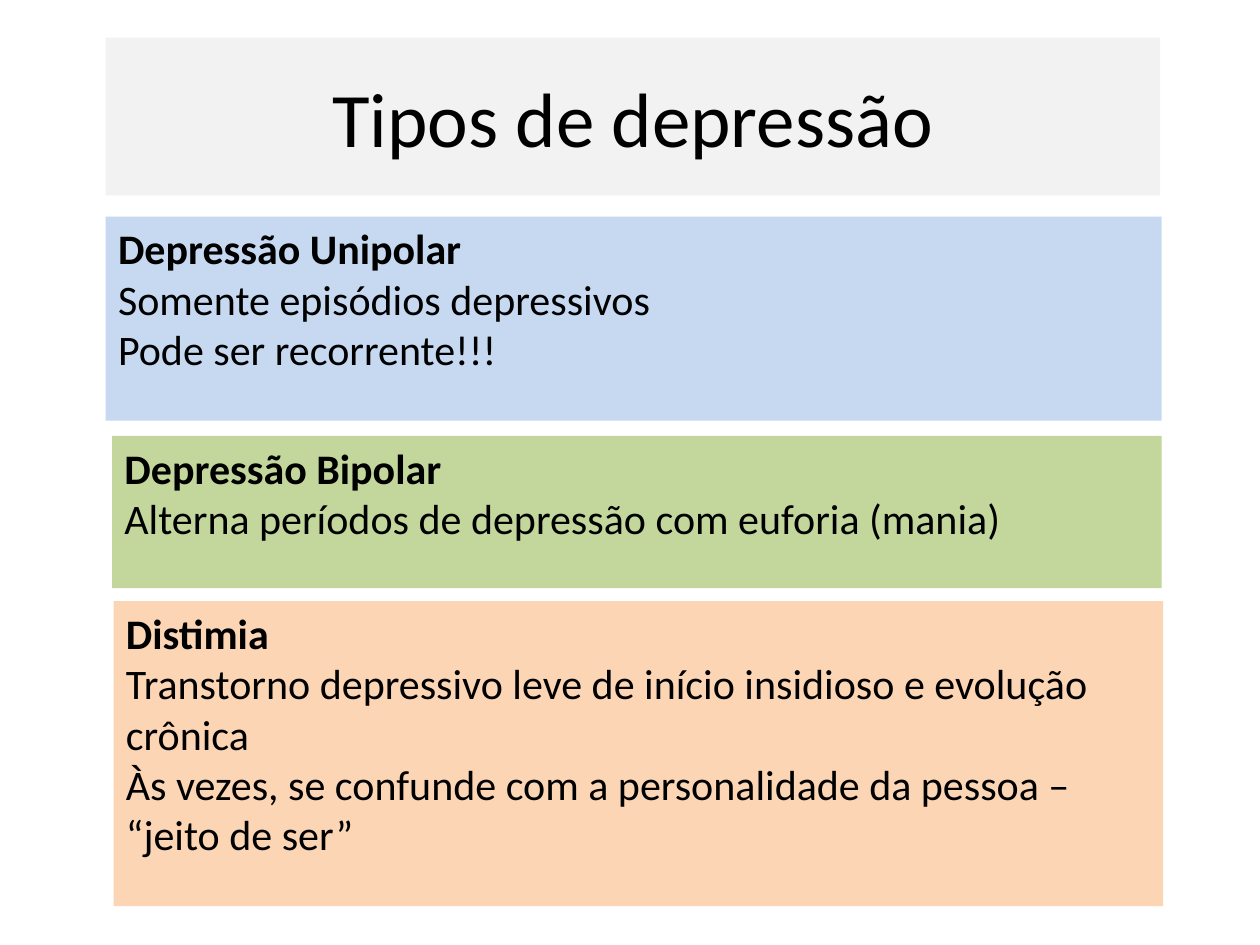
from dataclasses import dataclass

from pptx import Presentation
from pptx.dml.color import RGBColor
from pptx.enum.text import MSO_ANCHOR, MSO_AUTO_SIZE, PP_ALIGN
from pptx.util import Cm, Pt


@dataclass(frozen=True)
class Theme:
    font: str = "Calibri"
    ink: str = "000000"
    grey: str = "F2F2F2"
    blue: str = "C6D9F1"
    green: str = "C3D69B"
    peach: str = "FCD5B5"
    title: int = 44
    body: int = 24


THEME = Theme()

# Place (left, top, width, height in cm), fill, heading, lines
TYPES = [
    ((2.13, 4.37, 21.29, 4.11), THEME.blue, "Depressão Unipolar",
     ["Somente episódios depressivos", "Pode ser recorrente!!!"]),
    ((2.26, 8.79, 21.16, 3.07), THEME.green, "Depressão Bipolar",
     ["Alterna períodos de depressão com euforia (mania)"]),
    ((2.29, 12.12, 21.16, 6.15), THEME.peach, "Distimia",
     ["Transtorno depressivo leve de início insidioso e evolução crônica",
      "Às vezes, se confunde com a personalidade da pessoa – “jeito de ser”"]),
]


def add_box(slide, place, fill, anchor=MSO_ANCHOR.TOP):
    """Add a filled text box and return its text frame."""
    box = slide.shapes.add_textbox(*(Cm(size) for size in place))
    box.fill.solid()
    box.fill.fore_color.rgb = RGBColor.from_string(fill)
    frame = box.text_frame
    frame.word_wrap = True
    frame.auto_size = MSO_AUTO_SIZE.NONE
    frame.vertical_anchor = anchor
    return frame


def write(para, text, size=THEME.body, bold=False, align=PP_ALIGN.LEFT):
    para.alignment = align
    run = para.add_run()
    run.text = text
    font = run.font
    font.name = THEME.font
    font.size = Pt(size)
    font.bold = bold
    font.color.rgb = RGBColor.from_string(THEME.ink)


def add_title(slide, text):
    frame = add_box(slide, (2.13, 0.76, 21.26, 3.18), THEME.grey,
                    MSO_ANCHOR.MIDDLE)
    write(frame.paragraphs[0], text, size=THEME.title, align=PP_ALIGN.CENTER)


def add_type(slide, place, fill, head, lines):
    """Add one kind of depression: bold heading, then plain lines."""
    frame = add_box(slide, place, fill)
    write(frame.paragraphs[0], head, bold=True)
    for line in lines:
        write(frame.add_paragraph(), line)


def main():
    deck = Presentation()
    deck.slide_width, deck.slide_height = Cm(25.4), Cm(19.05)
    slide = deck.slides.add_slide(deck.slide_layouts[6])
    add_title(slide, "Tipos de depressão")
    for item in reversed(TYPES):
        add_type(slide, *item)
    deck.save("out.pptx")


if __name__ == "__main__":
    main()
